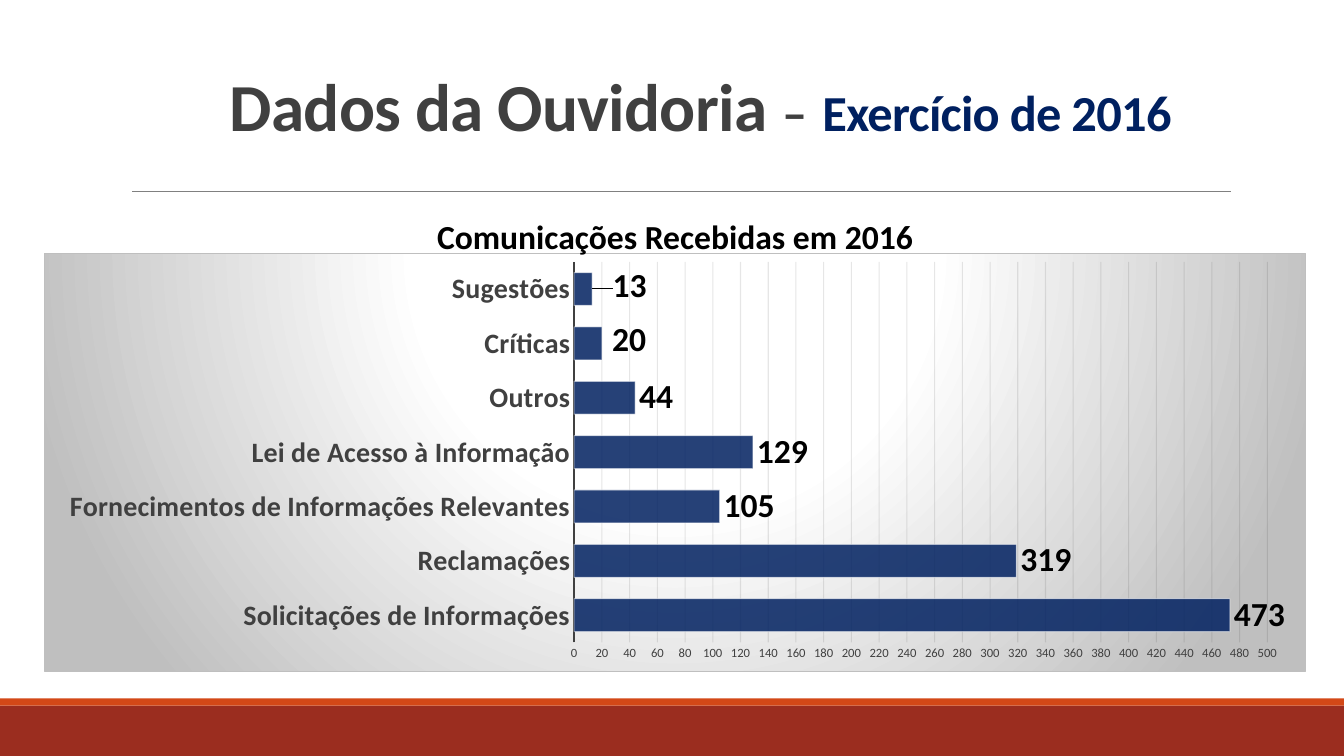
import pptx
import pptx.chart.data
import pptx.dml.color
import pptx.enum.chart
import pptx.enum.shapes
import pptx.enum.text
import pptx.oxml
import pptx.oxml.ns
import pptx.util
from pptx.util import Inches

FONT = "Calibri"
NAVY = "002060"
CHARCOAL = "404040"
BLACK = "000000"
CHANNELS = {
    "Solicitações de Informações": 473,
    "Reclamações": 319,
    "Fornecimentos de Informações Relevantes": 105,
    "Lei de Acesso à Informação": 129,
    "Outros": 44,
    "Críticas": 20,
    "Sugestões": 13,
}
# Label shifts as fractions of the chart's width and height
LABEL_SHIFTS = {"Críticas": (0.005, -0.007), "Sugestões": (0.013, -0.007)}

NAMESPACES = pptx.oxml.ns.nsdecls("a", "c")


def rgb(hex_code):
    return pptx.dml.color.RGBColor.from_string(hex_code)


def apply(target, **values):
    for attribute, value in values.items():
        setattr(target, attribute, value)


def style_font(font, size, color, bold=False):
    apply(font, name=FONT, size=pptx.util.Pt(size), bold=bold)
    font.color.rgb = rgb(color)


def style_line(line, color, width):
    line.color.rgb = rgb(color)
    line.width = pptx.util.Pt(width)


def set_alpha(fill_owner, percent):
    for color in fill_owner.iter(pptx.oxml.ns.qn("a:srgbClr")):
        color.append(pptx.oxml.parse_xml(
            f'<a:alpha {NAMESPACES} val="{percent * 1000}"/>'))


def add_band(slide, top, height, color):
    band = slide.shapes.add_shape(
        pptx.enum.shapes.MSO_SHAPE.RECTANGLE,
        0, Inches(top), Inches(13.33), Inches(height))
    band.shadow.inherit = False
    band.fill.solid()
    band.fill.fore_color.rgb = rgb(color)
    band.line.fill.background()


def add_rule(slide, left, right, y):
    rule = slide.shapes.add_connector(
        pptx.enum.shapes.MSO_CONNECTOR.STRAIGHT,
        Inches(left), Inches(y), Inches(right), Inches(y))
    style_line(rule.line, "808080", 0.5)
    rule._element.spPr.append(
        pptx.oxml.parse_xml(f"<a:effectLst {NAMESPACES}/>"))


def write_title(slide):
    title = slide.shapes.title
    apply(title, left=Inches(1.2), top=Inches(0.31),
          width=Inches(11), height=Inches(1.59))
    frame = title.text_frame
    apply(frame, word_wrap=True,
          auto_size=pptx.enum.text.MSO_AUTO_SIZE.NONE,
          vertical_anchor=pptx.enum.text.MSO_ANCHOR.MIDDLE)
    heading = frame.paragraphs[0]
    apply(heading, alignment=pptx.enum.text.PP_ALIGN.CENTER, line_spacing=0.85)
    for text, size, color in (
        ("\tDados da Ouvidoria ", 48, CHARCOAL),
        ("–", 36, CHARCOAL),
        (" ", 48, CHARCOAL),
        ("Exercício de 2016", 36, NAVY),
    ):
        run = heading.add_run()
        run.text = text
        style_font(run.font, size, color, bold=True)
        run._r.get_or_add_rPr().set("spc", "-50")


def add_caption(slide, text):
    caption = slide.shapes.add_textbox(
        Inches(0.44), Inches(2.09), Inches(12.51), Inches(0.81))
    caption.text_frame.word_wrap = True
    paragraph = caption.text_frame.paragraphs[0]
    paragraph.alignment = pptx.enum.text.PP_ALIGN.CENTER
    run = paragraph.add_run()
    run.text = text
    style_font(run.font, 24, BLACK, bold=True)


def layout_xml(**values):
    items = "".join(f'<c:{key} val="{value}"/>' for key, value in values.items())
    return pptx.oxml.parse_xml(
        f"<c:layout {NAMESPACES}><c:manualLayout>{items}"
        "</c:manualLayout></c:layout>")


def paint_chart_background(chart):
    stops = "".join(
        f'<a:gs pos="{position * 1000}"><a:srgbClr val="{color}"/></a:gs>'
        for position, color in ((0, "FFFFFF"), (39, "FFFFFF"), (100, "BFBFBF")))
    background = pptx.oxml.parse_xml(
        f"<c:spPr {NAMESPACES}><a:gradFill><a:gsLst>{stops}</a:gsLst>"
        '<a:path path="circle"><a:fillToRect l="50000" t="-80000" r="50000" '
        'b="180000"/></a:path></a:gradFill><a:ln w="9525"><a:solidFill>'
        '<a:srgbClr val="BFBFBF"/></a:solidFill></a:ln></c:spPr>')
    chart._chartSpace.chart.addnext(background)


def style_axes(chart):
    no_ticks = pptx.enum.chart.XL_TICK_MARK.NONE
    channel_axis, count_axis = chart.category_axis, chart.value_axis
    for axis in (channel_axis, count_axis):
        apply(axis, major_tick_mark=no_ticks, minor_tick_mark=no_ticks)
    style_font(channel_axis.tick_labels.font, 20, CHARCOAL, bold=True)
    style_line(channel_axis.format.line, CHARCOAL, 1.5)

    apply(count_axis, minimum_scale=0, maximum_scale=500, major_unit=20,
          has_major_gridlines=True)
    style_font(count_axis.tick_labels.font, 9, CHARCOAL)
    count_axis.format.line.fill.background()
    grid = count_axis.major_gridlines.format
    style_line(grid.line, "0D0D0D", 0.75)
    set_alpha(count_axis.major_gridlines._xAx.find(
        pptx.oxml.ns.qn("c:majorGridlines")), 10)


def style_bars(plot):
    apply(plot, gap_width=65, vary_by_categories=False)
    bars = plot.series[0]
    bars.format.fill.solid()
    bars.format.fill.fore_color.rgb = rgb(NAVY)
    bar_properties = bars._element.spPr
    set_alpha(bar_properties, 85)
    style_line(bars.format.line, "FFFFFF", 0.75)
    set_alpha(bar_properties.find(pptx.oxml.ns.qn("a:ln")), 50)

    outside = pptx.enum.chart.XL_LABEL_POSITION.OUTSIDE_END
    labels = bars.data_labels
    apply(labels, show_value=True, position=outside)
    style_font(labels.font, 24, BLACK, bold=True)
    for index, channel in enumerate(CHANNELS):
        if channel in LABEL_SHIFTS:
            label = bars.points[index].data_label
            style_font(label.font, 24, BLACK, bold=True)
            label.position = outside
            x, y = LABEL_SHIFTS[channel]
            label._dLbl.find(pptx.oxml.ns.qn("c:idx")).addnext(
                layout_xml(x=x, y=y))


def add_channel_chart(slide):
    data = pptx.chart.data.CategoryChartData()
    data.categories = list(CHANNELS)
    data.add_series("Series 1", list(CHANNELS.values()))
    chart = slide.shapes.add_chart(
        pptx.enum.chart.XL_CHART_TYPE.BAR_CLUSTERED,
        Inches(0.44), Inches(2.51), Inches(12.51), Inches(4.16), data).chart
    apply(chart, has_title=False, has_legend=False)
    style_font(chart.font, 10, BLACK)
    paint_chart_background(chart)
    style_axes(chart)
    style_bars(chart.plots[0])

    # Fixed inner plot area
    plot_area = chart._chartSpace.chart.plotArea
    for automatic in plot_area.findall(pptx.oxml.ns.qn("c:layout")):
        plot_area.remove(automatic)
    plot_area.insert(0, layout_xml(
        layoutTarget="inner", xMode="edge", yMode="edge",
        x=0.42, y=0.02, w=0.55, h=0.91))


def main():
    deck = pptx.Presentation()
    apply(deck, slide_width=Inches(13.33), slide_height=Inches(7.5))
    slide = deck.slides.add_slide(deck.slide_layouts[5])

    # Footer bands and title rule
    add_band(slide, 7, 0.5, "9B2D1F")
    add_band(slide, 6.93, 0.07, "D34817")
    add_rule(slide, 1.31, 12.21, 1.9)

    # Title, chart and its caption
    write_title(slide)
    add_channel_chart(slide)
    add_caption(slide, "Comunicações Recebidas em 2016")
    deck.save("out.pptx")


if __name__ == "__main__":
    main()
